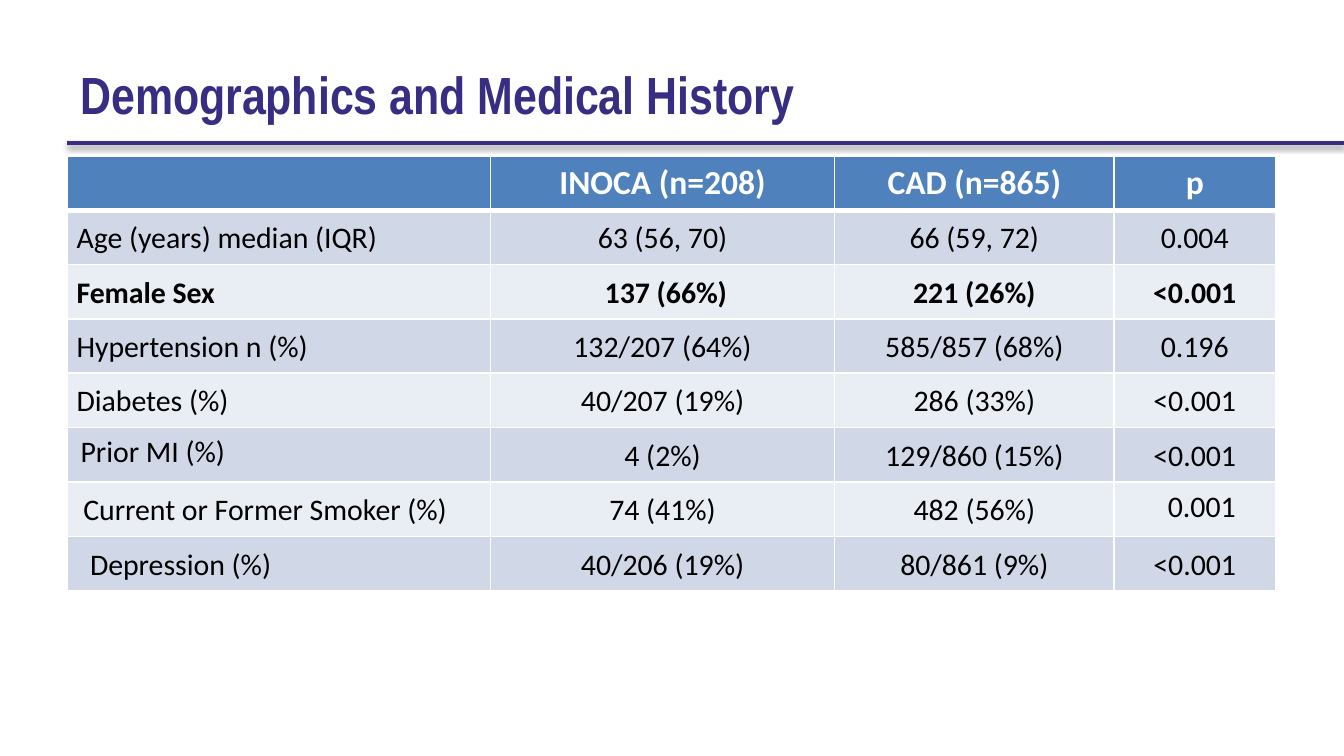
from dataclasses import dataclass

from pptx import Presentation
from pptx.dml.color import RGBColor
from pptx.enum.shapes import MSO_CONNECTOR
from pptx.enum.text import MSO_ANCHOR, PP_ALIGN
from pptx.oxml import parse_xml
from pptx.oxml.ns import nsdecls
from pptx.util import Inches, Pt

INDIGO = RGBColor(0x37, 0x2D, 0x83)
HEADER_BLUE = RGBColor(0x4F, 0x81, 0xBD)
BAND_DARK = RGBColor(0xD0, 0xD8, 0xE8)
BAND_LIGHT = RGBColor(0xE9, 0xED, 0xF4)
WHITE = RGBColor(0xFF, 0xFF, 0xFF)
BLACK = RGBColor(0x00, 0x00, 0x00)

SLIDE_WIDTH, SLIDE_HEIGHT = Inches(10), Inches(5.625)
MARGIN = 0.05
COLUMN_SHARES = (0.315, 0.256, 0.208, 0.12)
TABLE_TOP, ROW_SHARE = 0.206, 0.072
SPACE_INDENT = 0.05


@dataclass(frozen=True)
class Placement:
    align: PP_ALIGN = PP_ALIGN.CENTER
    anchor: MSO_ANCHOR = MSO_ANCHOR.MIDDLE
    left: float = 0.07
    side: float = 0.07
    vertical: float = 0
    line_spacing: float = 1.07


@dataclass(frozen=True)
class TextStyle:
    size: float
    color: RGBColor
    bold: bool = False
    font: str = "Calibri"


@dataclass(frozen=True)
class Measure:
    label: str
    inoca: str
    cad: str
    p_value: str
    bold: bool = False


def top_left(indent: float = 0) -> Placement:
    return Placement(PP_ALIGN.LEFT, MSO_ANCHOR.TOP, 0.1 + indent, 0.1, 0.05, 1)


HEADER_PLACE = Placement(PP_ALIGN.CENTER, MSO_ANCHOR.TOP, 0.1, 0.1, 0.05, 1)
LABEL_PLACE = Placement(PP_ALIGN.LEFT)
VALUE_PLACE = Placement()
HEADINGS = ("", "INOCA (n=208)", "CAD (n=865)", "p")
MEASURES = (
    Measure("Age (years) median (IQR)", "63 (56, 70)", "66 (59, 72)", "0.004"),
    Measure("Female Sex", "137 (66%)", "221 (26%)", "<0.001", bold=True),
    Measure("Hypertension n (%)", "132/207 (64%)", "585/857 (68%)", "0.196"),
    Measure("Diabetes (%)", "40/207 (19%)", "286 (33%)", "<0.001"),
    Measure("Prior MI (%)", "4 (2%)", "129/860 (15%)", "<0.001"),
    Measure("Current or Former Smoker (%)", "74 (41%)", "482 (56%)", "0.001"),
    Measure("Depression (%)", "40/206 (19%)", "80/861 (9%)", "<0.001"),
)
SPECIAL_PLACES = {
    (2, 1): Placement(left=0.07 + SPACE_INDENT),
    (5, 0): top_left(),
    (6, 0): Placement(PP_ALIGN.LEFT, left=0.07 + SPACE_INDENT),
    (6, 3): top_left(6 * SPACE_INDENT),
    (7, 0): Placement(PP_ALIGN.LEFT, left=0.07 + 2 * SPACE_INDENT),
}


def across(share: float) -> int:
    return round(SLIDE_WIDTH * share)


def down(share: float) -> int:
    return round(SLIDE_HEIGHT * share)


def add_text(paragraph, text: str, style: TextStyle) -> None:
    run = paragraph.add_run()
    run.text = text
    run.font.name = style.font
    run.font.size = Pt(style.size)
    run.font.bold = style.bold
    run.font.color.rgb = style.color


def set_borders(cell, top: float, bottom: float) -> None:
    properties = cell._tc.get_or_add_tcPr()
    widths = {"lnL": 1, "lnR": 1, "lnT": top, "lnB": bottom}
    for position, (edge, width) in enumerate(widths.items()):
        properties.insert(position, parse_xml(
            f'<a:{edge} {nsdecls("a")} w="{Pt(width)}"><a:solidFill>'
            f'<a:srgbClr val="{WHITE}"/></a:solidFill></a:{edge}>'))


def fill_cell(cell, text: str, style: TextStyle, place: Placement,
              fill: RGBColor) -> None:
    cell.fill.solid()
    cell.fill.fore_color.rgb = fill
    cell.vertical_anchor = place.anchor
    cell.margin_left, cell.margin_right = Inches(place.left), Inches(place.side)
    cell.margin_top = cell.margin_bottom = Inches(place.vertical)
    paragraph = cell.text_frame.paragraphs[0]
    paragraph.alignment = place.align
    paragraph.line_spacing = place.line_spacing
    if text:
        add_text(paragraph, text, style)


def add_rule(slide) -> None:
    height = down(0.189)
    rule = slide.shapes.add_connector(
        MSO_CONNECTOR.STRAIGHT, across(MARGIN), height, SLIDE_WIDTH, height)
    rule.line.color.rgb = INDIGO
    rule.line.width = Pt(2)
    rule._element.spPr.append(parse_xml(
        f'<a:effectLst {nsdecls("a")}><a:outerShdw blurRad="{Pt(3.1)}" '
        f'dist="{Pt(1.6)}" dir="5400000" rotWithShape="0"><a:srgbClr val="{BLACK}">'
        '<a:alpha val="38000"/></a:srgbClr></a:outerShdw></a:effectLst>'))


def add_title(slide, text: str) -> None:
    title = slide.shapes.add_textbox(
        across(MARGIN), down(0.04), across(1 - 2 * MARGIN), down(0.168))
    frame = title.text_frame
    frame.word_wrap = True
    frame.vertical_anchor = MSO_ANCHOR.MIDDLE
    add_text(frame.paragraphs[0], text, TextStyle(28, INDIGO, True, "Arial Narrow"))


def add_history_table(slide) -> None:
    row_count = len(MEASURES) + 1
    table = slide.shapes.add_table(
        row_count, len(HEADINGS), across(MARGIN), down(TABLE_TOP),
        across(sum(COLUMN_SHARES)), down(ROW_SHARE * row_count)).table
    table.first_row = table.horz_banding = False
    for column, share in zip(table.columns, COLUMN_SHARES):
        column.width = across(share)
    for row in table.rows:
        row.height = down(ROW_SHARE)
    for column, heading in enumerate(HEADINGS):
        cell = table.cell(0, column)
        fill_cell(cell, heading, TextStyle(18, WHITE, True), HEADER_PLACE, HEADER_BLUE)
        set_borders(cell, top=1, bottom=3)
    for row, measure in enumerate(MEASURES, start=1):
        style = TextStyle(16, BLACK, measure.bold)
        band = BAND_DARK if row % 2 else BAND_LIGHT
        values = (measure.label, measure.inoca, measure.cad, measure.p_value)
        for column, value in enumerate(values):
            default = VALUE_PLACE if column else LABEL_PLACE
            place = SPECIAL_PLACES.get((row, column), default)
            cell = table.cell(row, column)
            fill_cell(cell, value, style, place, band)
            set_borders(cell, top=3 if row == 1 else 1, bottom=1)


def main() -> None:
    deck = Presentation()
    deck.slide_width, deck.slide_height = SLIDE_WIDTH, SLIDE_HEIGHT
    slide = deck.slides.add_slide(deck.slide_layouts[6])
    add_rule(slide)
    add_title(slide, "Demographics and Medical History")
    add_history_table(slide)
    deck.save("out.pptx")


if __name__ == "__main__":
    main()
